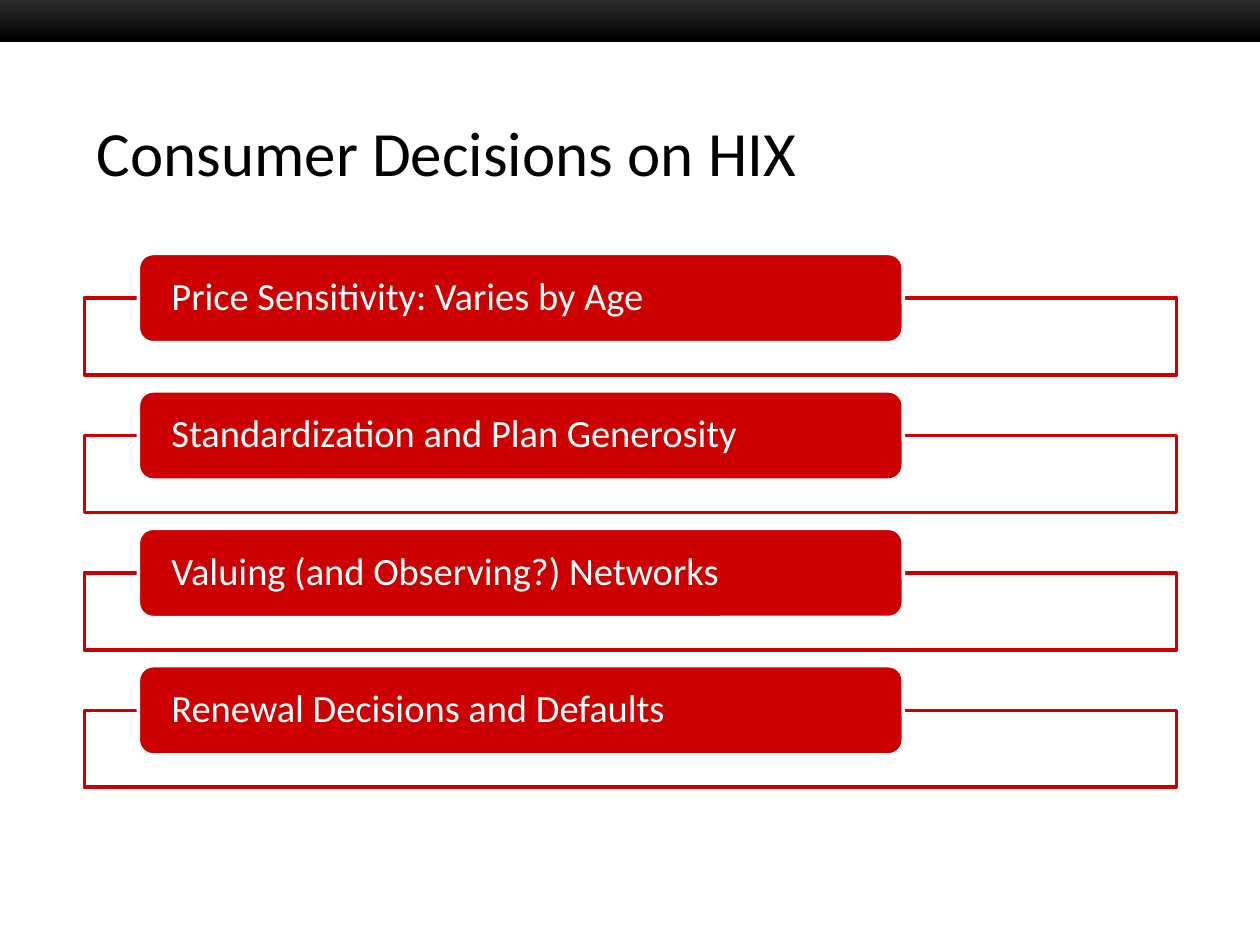
from pptx import Presentation
from pptx.dml.color import RGBColor
from pptx.enum.shapes import MSO_SHAPE
from pptx.enum.text import MSO_ANCHOR, PP_ALIGN
from pptx.oxml.ns import qn
from pptx.util import Cm, Pt
from lxml import etree

RECT, ROUND = MSO_SHAPE.RECTANGLE, MSO_SHAPE.ROUNDED_RECTANGLE
LEFT, MIDDLE = PP_ALIGN.LEFT, MSO_ANCHOR.MIDDLE

TITLE = "Consumer Decisions on HIX"
TOPICS = [
    "Price Sensitivity: Varies by Age",
    "Standardization and Plan Generosity",
    "Valuing (and Observing?) Networks",
    "Renewal Decisions and Defaults",
]
FONT = "Calibri"
RED, WHITE, BLACK, GREY = "CC0000", "FFFFFF", "000000", "333333"

MARGIN, WIDTH = 1.7, 22.02
TOP, STEP = 5.11, 2.77
PILL_LEFT, PILL_W, PILL_H = 2.79, 15.42, 1.8
FRAME_H = 1.55


def rgb(code):
    return RGBColor.from_string(code)


def box(shapes, kind, x, y, w, h, fill, line):
    shape = shapes.add_shape(kind, Cm(x), Cm(y), Cm(w), Cm(h))
    shape.shadow.inherit = False
    shape.fill.solid()
    shape.fill.fore_color.rgb = rgb(fill)
    shape.line.color.rgb = rgb(line)
    shape.line.width = Pt(2)
    return shape


def fade(shape, percent):
    """Set the opacity of a solid fill."""
    color = shape.fill._xPr.find(qn("a:solidFill"))[0]
    etree.SubElement(color, qn("a:alpha")).set("val", str(percent * 1000))


def write(frame, text, size, color):
    frame.word_wrap = True
    frame.vertical_anchor = MIDDLE
    para = frame.paragraphs[0]
    para.alignment = LEFT
    run = para.add_run()
    run.text = text
    run.font.name = FONT
    run.font.size = Pt(size)
    run.font.color.rgb = rgb(color)
    return para


def add_band(slide, width):
    band = slide.shapes.add_shape(RECT, 0, Cm(-0.13), width, Cm(0.97))
    band.shadow.inherit = False
    band.line.fill.background()
    band.fill.gradient()
    band.fill.gradient_angle = 270
    for stop, code in zip(band.fill.gradient_stops, (GREY, BLACK)):
        stop.color.rgb = rgb(code)


def add_topic(shapes, text, top):
    frame = box(shapes, RECT, MARGIN, top + PILL_H / 2, WIDTH, FRAME_H,
                WHITE, RED)
    fade(frame, 90)
    pill = box(shapes, ROUND, PILL_LEFT, top, PILL_W, PILL_H, RED, WHITE)
    body = pill.text_frame
    body.margin_left = body.margin_right = Cm(0.58)
    body.margin_top = body.margin_bottom = 0
    write(body, text, 22, WHITE).line_spacing = 0.9


def main():
    deck = Presentation()
    deck.slide_width, deck.slide_height = Cm(25.4), Cm(19.05)
    slide = deck.slides.add_slide(deck.slide_layouts[5])
    add_band(slide, deck.slide_width)

    title = slide.shapes.title
    title.left, title.top = Cm(MARGIN), Cm(2.11)
    title.width, title.height = Cm(WIDTH), Cm(1.9)
    write(title.text_frame, TITLE, 36, BLACK)

    group = slide.shapes.add_group_shape()
    for i, topic in enumerate(TOPICS):
        add_topic(group.shapes, topic, TOP + i * STEP)

    deck.save("out.pptx")


if __name__ == "__main__":
    main()
